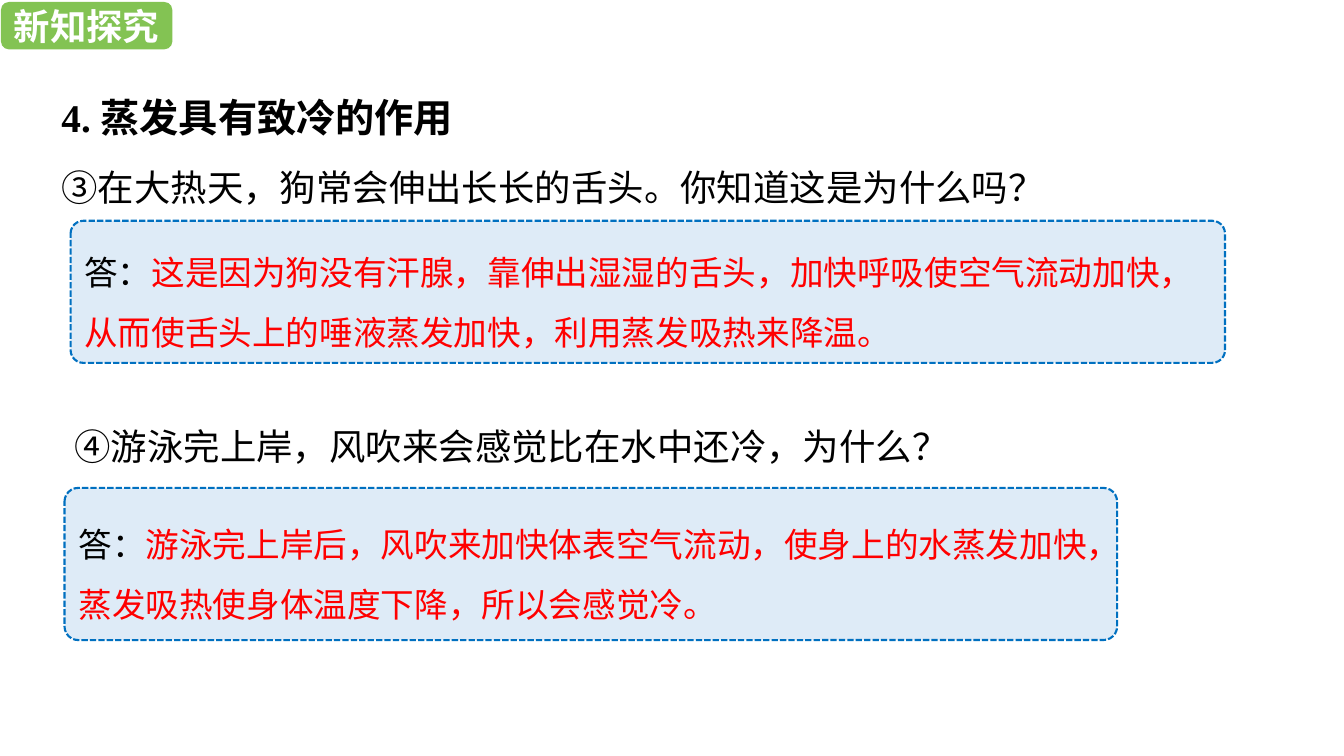
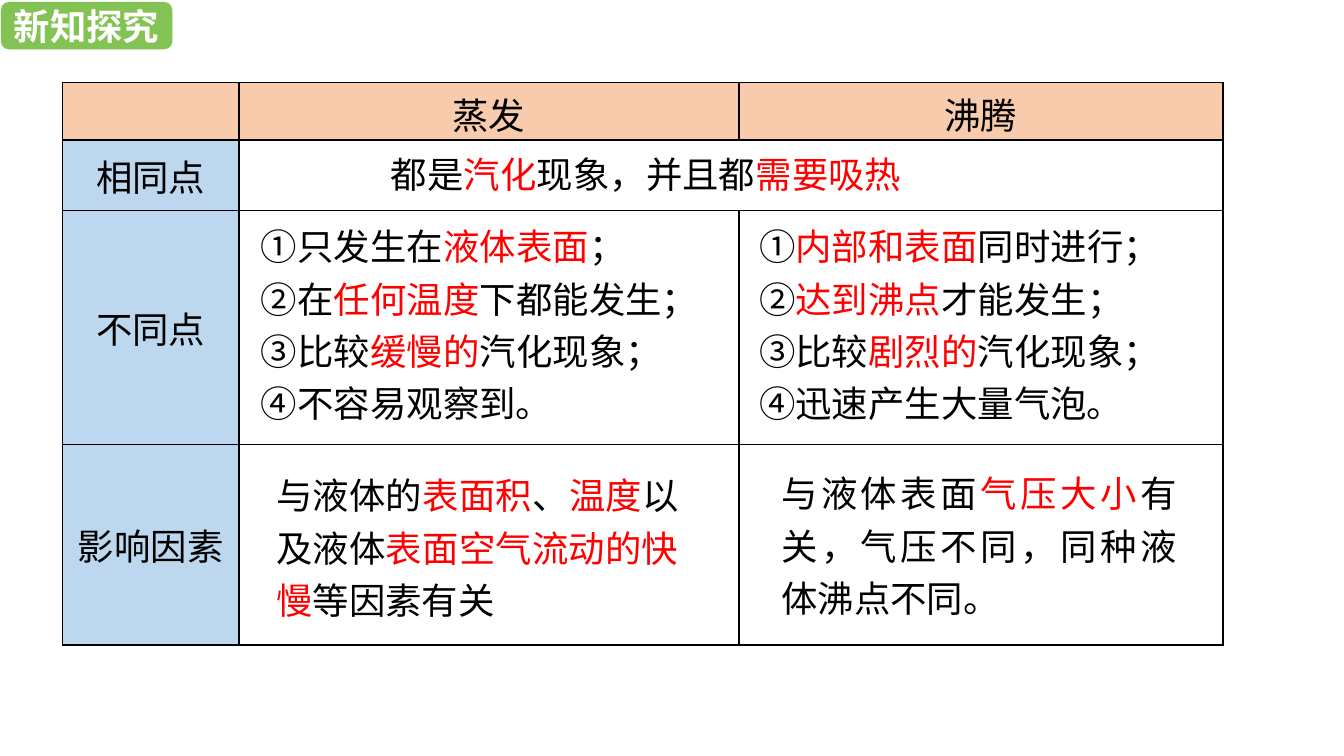
from lxml.etree import SubElement
from pptx import Presentation
from pptx.dml.color import RGBColor
from pptx.enum.dml import MSO_LINE
from pptx.enum.shapes import MSO_SHAPE
from pptx.enum.text import MSO_ANCHOR, MSO_AUTO_SIZE, PP_ALIGN
from pptx.oxml.ns import qn
from pptx.util import Pt

PX = 9144  # EMU in one px, 100 px to the inch
TITLE_ONLY, BLANK = 5, 6

CJK = "Noto Sans CJK SC"
LATIN = "Times New Roman"

BLACK = RGBColor(0x00, 0x00, 0x00)
WHITE = RGBColor(0xFF, 0xFF, 0xFF)
RED = RGBColor(0xFF, 0x00, 0x00)
GREEN = RGBColor(0x83, 0xC3, 0x53)
BLUE = RGBColor(0x00, 0x70, 0xC0)
PALE_BLUE = RGBColor(0xDE, 0xEB, 0xF7)
LABEL_BLUE = RGBColor(0xBD, 0xD7, 0xEE)
HEADER_ORANGE = RGBColor(0xF8, 0xCB, 0xAD)


def px(*lengths):
    return [length * PX for length in lengths]


# Text: pieces between asterisks are red
def write(frame, lines, size=26, font=CJK, color=BLACK, bold=False,
          align=PP_ALIGN.LEFT, spacing=1.0):
    for index, line in enumerate(lines):
        para = frame.paragraphs[0] if index == 0 else frame.add_paragraph()
        para.alignment = align
        para.line_spacing = spacing
        para.font.size = Pt(size)
        para.font.name = font
        para.font.bold = bold
        para.font.color.rgb = color
        for order, piece in enumerate(line.split("*")):
            if piece:
                span = para.add_run()
                span.text = piece
                if order % 2:
                    span.font.color.rgb = RED


def add_text(page, place, lines, **style):
    frame = page.shapes.add_textbox(*px(*place)).text_frame
    frame.word_wrap = True
    write(frame, lines, **style)


def add_round_box(page, place, fill, line, **style):
    box = page.shapes.add_shape(MSO_SHAPE.ROUNDED_RECTANGLE, *px(*place))
    box.shadow.inherit = False
    box.fill.solid()
    box.fill.fore_color.rgb = fill
    box.line.fill.background()
    box.text_frame.vertical_anchor = MSO_ANCHOR.MIDDLE
    write(box.text_frame, [line], **style)
    return box


def add_badge(page):
    add_round_box(page, (1, 2, 170, 47), GREEN, "新知探究",
                  color=WHITE, bold=True, align=PP_ALIGN.CENTER)


def add_answer(page, place, answer):
    box = add_round_box(page, place, PALE_BLUE, f"答：*{answer}*",
                        size=24, spacing=1.5)
    box.adjustments[0] = 0.09
    box.line.color.rgb = BLUE
    box.line.width = Pt(1.5)
    box.line.dash_style = MSO_LINE.SQUARE_DOT


def set_title(page, place, text):
    title = page.shapes.title
    title.left, title.top, title.width, title.height = px(*place)
    frame = title.text_frame
    frame.auto_size = MSO_AUTO_SIZE.NONE
    frame.vertical_anchor = MSO_ANCHOR.TOP
    write(frame, [text], size=28, font=LATIN, bold=True, spacing=1.5)


# Table
def set_borders(cell):
    properties = cell._tc.get_or_add_tcPr()
    for side in ("lnL", "lnR", "lnT", "lnB"):
        border = SubElement(properties, qn(f"a:{side}"), w=str(Pt(1)))
        fill = SubElement(border, qn("a:solidFill"))
        SubElement(fill, qn("a:srgbClr"), val=str(BLACK))


def format_cell(cell, fill, text):
    set_borders(cell)
    if fill is None:
        cell.fill.background()
    else:
        cell.fill.solid()
        cell.fill.fore_color.rgb = fill
    if text:
        cell.vertical_anchor = MSO_ANCHOR.MIDDLE
        cell.margin_left = cell.margin_right = 7 * PX
        cell.margin_top = cell.margin_bottom = 4 * PX
        write(cell.text_frame, [text], align=PP_ALIGN.CENTER)


def add_grid(page, left, top, widths, heights, headers, labels):
    place = px(left, top, sum(widths), sum(heights))
    table = page.shapes.add_table(len(heights), len(widths), *place).table
    table.first_row = table.horz_banding = False
    for column, width in zip(table.columns, widths):
        column.width = width * PX
    for row, height in zip(table.rows, heights):
        row.height = height * PX
    for r in range(len(heights)):
        for c in range(len(widths)):
            if r == 0:
                fill, text = HEADER_ORANGE, headers[c]
            elif c == 0:
                fill, text = LABEL_BLUE, labels[r - 1]
            else:
                fill, text = None, ""
            format_cell(table.cell(r, c), fill, text)
    return table


# Slides
def build_questions(deck):
    page = deck.slides.add_slide(deck.slide_layouts[TITLE_ONLY])
    add_badge(page)
    set_title(page, (51, 64, 460, 81), "4. 蒸发具有致冷的作用")
    add_text(page, (51, 137, 1238, 68),
             ["③在大热天，狗常会伸出长长的舌头。你知道这是为什么吗？"], spacing=1.5)
    add_answer(page, (70, 219, 1145, 141),
               "这是因为狗没有汗腺，靠伸出湿湿的舌头，加快呼吸使空气流动加快，"
               "从而使舌头上的唾液蒸发加快，利用蒸发吸热来降温。")
    add_text(page, (64, 394, 895, 68),
             ["④游泳完上岸，风吹来会感觉比在水中还冷，为什么？"], spacing=1.5)
    add_answer(page, (64, 484, 1044, 151),
               "游泳完上岸后，风吹来加快体表空气流动，使身上的水蒸发加快，"
               "蒸发吸热使身体温度下降，所以会感觉冷。")


def build_comparison(deck):
    page = deck.slides.add_slide(deck.slide_layouts[BLANK])
    add_badge(page)
    table = add_grid(page, 62, 82, (175, 496, 480), (57, 70, 232, 199),
                     ("", "蒸发", "沸腾"), ("相同点", "不同点", "影响因素"))
    table.cell(1, 1).merge(table.cell(1, 2))

    # What both share
    add_text(page, (378, 146, 677, 54),
             ["都是*汽化*现象，并且都*需要吸热*"], font=LATIN)

    # How they differ
    differences = (
        ((249, 209, 468, 216),
         ["①只发生在*液体表面*；", "②在*任何温度*下都能发生；",
          "③比较*缓慢的*汽化现象；", "④不容易观察到。"]),
        ((743, 209, 455, 216),
         ["①*内部和表面*同时进行；", "②*达到沸点*才能发生；",
          "③比较*剧烈的*汽化现象；", "④迅速产生大量气泡。"]),
    )
    for place, lines in differences:
        add_text(page, place, lines, font=LATIN, spacing=1.2)

    # What affects them
    factors = (
        ((264, 456, 419, 168),
         "与液体的*表面积*、*温度*以及液体*表面空气流动的快慢*等因素有关"),
        ((765, 454, 412, 168),
         "与液体表面*气压大小*有关，气压不同，同种液体沸点不同。"),
    )
    for place, line in factors:
        add_text(page, place, [line], font=LATIN, spacing=1.2,
                 align=PP_ALIGN.JUSTIFY)


def main():
    deck = Presentation()
    deck.slide_width, deck.slide_height = px(1333, 750)
    build_questions(deck)
    build_comparison(deck)
    deck.save("out.pptx")


if __name__ == "__main__":
    main()
